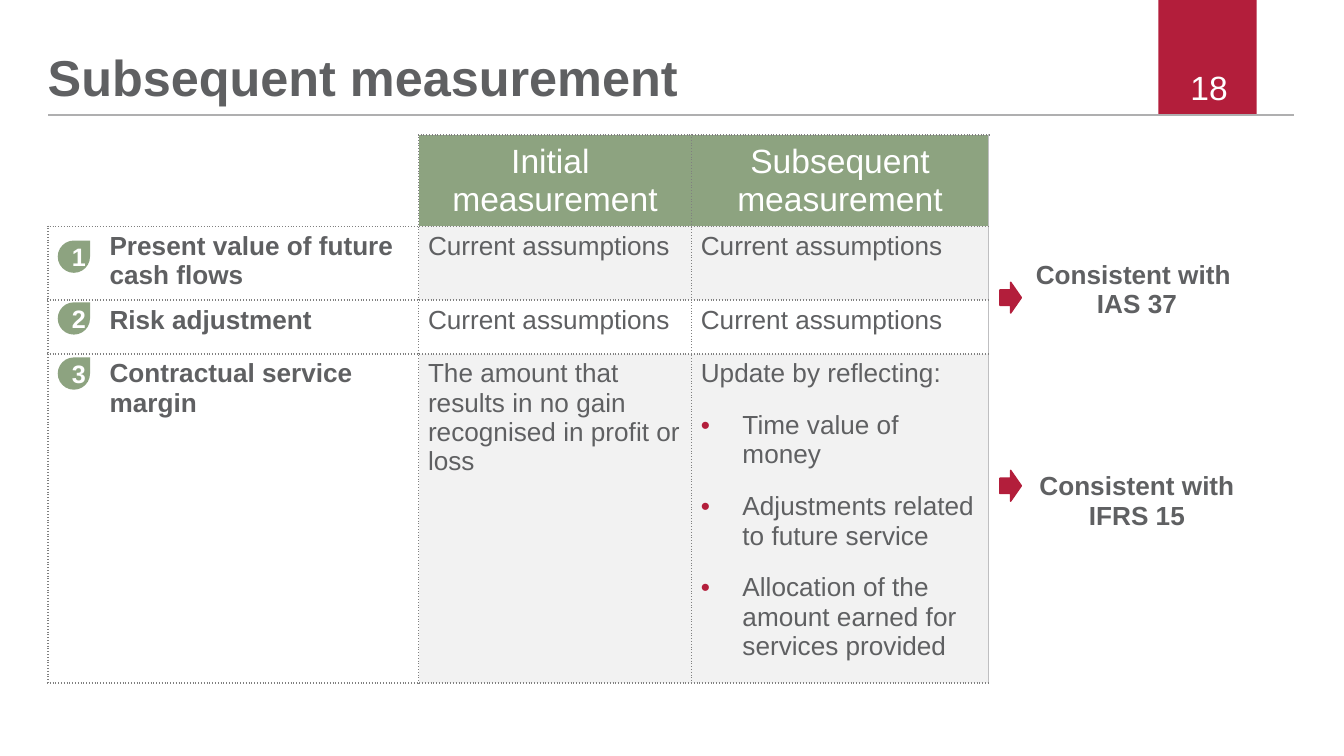
import pptx
import pptx.util
import pptx.dml.color
import pptx.enum.shapes
import pptx.enum.text
import pptx.oxml
import pptx.oxml.ns
from dataclasses import dataclass, field
from typing import Any

SCALE = 4572  # EMU per px, 200 px to the inch
FONT = "Arial"
C = {"red": "B31E3B", "green": "8DA380", "text": "5F6062", "white": "FFFFFF",
     "band": "F2F2F2", "dots": "808080", "edge": "BFBFC1", "rule": "AFAFB0"}
DOTTED, EDGE, WHITE = ("dots", "sysDot"), ("edge", "solid"), ("white", "solid")
ALIGN = pptx.enum.text.PP_ALIGN
ANCHOR = pptx.enum.text.MSO_ANCHOR
SHAPE = pptx.enum.shapes.MSO_SHAPE


@dataclass
class Cell:
    texts: list[str] = field(default_factory=list)
    fill: str | None = None
    middle: bool = False
    fmt: dict[str, Any] = field(default_factory=dict)
    inset_x: int = 14
    bottom: int = 8


def px(n: int) -> int:
    return n * SCALE


def rgb(name: str) -> pptx.dml.color.RGBColor:
    return pptx.dml.color.RGBColor.from_string(C[name])


def element(tag: str, **attrs: Any):
    el = pptx.oxml.parse_xml(f"<a:{tag} {pptx.oxml.ns.nsdecls('a')}/>")
    for key, value in attrs.items():
        el.set(key, str(value))
    return el


def colored(tag: str, color: str):
    el = element(tag)
    el.append(element("srgbClr", val=C[color]))
    return el


def add_text(tf, text: str, first: bool = True, size: float = 14, color: str = "text",
             bold: bool = False, align=ALIGN.LEFT, indent: int = 0, bullet: bool = False,
             before: int = 0, after: int = 0, spacing: float | None = None) -> None:
    p = tf.paragraphs[0] if first else tf.add_paragraph()
    p.alignment, p.line_spacing = align, spacing
    p.space_before = pptx.util.Pt(0 if first else before)
    p.space_after = pptx.util.Pt(after)
    pPr = p._p.get_or_add_pPr()
    if indent:
        pPr.set("marL", str(px(indent)))
    if bullet:
        pPr.set("indent", str(-px(indent)))
        pPr.append(colored("buClr", "red"))
        pPr.append(element("buFont", typeface=FONT))
        pPr.append(element("buChar", char="•"))
    r = p.add_run()
    r.text = text
    r.font.name, r.font.size, r.font.bold = FONT, pptx.util.Pt(size), bold
    r.font.color.rgb = rgb(color)


def set_insets(box, x: int, y: int) -> None:
    box.margin_left = box.margin_right = px(x)
    box.margin_top = box.margin_bottom = px(y)


def add_box(s, at: tuple[int, ...], inset: tuple[int, int], anchor):
    tf = s.shapes.add_textbox(*map(px, at)).text_frame
    tf.word_wrap, tf.vertical_anchor = True, anchor
    set_insets(tf, *inset)
    return tf


def add_shape(s, kind, at: tuple[int, ...], fill: str, line: str | None = None):
    sp = s.shapes.add_shape(kind, *map(px, at))
    sp.shadow.inherit = False
    sp.fill.solid()
    sp.fill.fore_color.rgb = rgb(fill)
    if line:
        sp.line.color.rgb = rgb(line)
        sp.line.width = pptx.util.Pt(0.75)
    else:
        sp.line.fill.background()
    return sp


def set_borders(cell, sides: dict[str, tuple[str, str] | None]) -> None:
    tcPr = cell._tc.get_or_add_tcPr()
    for side in "LRTB":
        ln = element(f"ln{side}", w=12700)
        if sides[side]:
            color, dash = sides[side]
            ln.append(colored("solidFill", color))
            ln.append(element("prstDash", val=dash))
        else:
            ln.append(element("noFill"))
        tcPr.append(ln)


def borders_at(row: int, col: int) -> dict[str, tuple[str, str] | None]:
    if col == 3:
        return {**dict.fromkeys("LRTB"), "L": EDGE}
    sides = dict.fromkeys("LRTB", DOTTED)
    if col == 2:
        sides["R"] = EDGE
    if (row, col) == (0, 0):
        sides["L"] = sides["T"] = WHITE
    return sides


def fill_cell(cell, data: Cell) -> None:
    set_insets(cell, data.inset_x, 8)
    cell.margin_bottom = px(data.bottom)
    cell.vertical_anchor = ANCHOR.MIDDLE if data.middle else ANCHOR.TOP
    if data.fill:
        cell.fill.solid()
        cell.fill.fore_color.rgb = rgb(data.fill)
    else:
        cell.fill.background()
    for i, text in enumerate(data.texts):
        # Lines after the first in a top-anchored cell are bullets
        listed = {"bullet": True, "indent": 62, "before": 6} if i and not data.middle else {}
        add_text(cell.text_frame, text, first=i == 0, **{**data.fmt, **listed})


def header(*texts: str) -> Cell:
    return Cell(list(texts), "green", True,
                {"size": 18, "color": "white", "align": ALIGN.CENTER})


def label(text: str) -> Cell:
    return Cell([text], fmt={"bold": True, "indent": 78})


def remark(*texts: str, **insets: int) -> Cell:
    return Cell(list(texts), None, True, {"bold": True, "align": ALIGN.CENTER}, **insets)


CURRENT = "Current assumptions"
ROWS = [
    [Cell(), header("Initial ", "measurement"), header("Subsequent measurement"), Cell()],
    [label("Present value of future cash flows"), Cell([CURRENT], "band"),
     Cell([CURRENT], "band"), remark("Consistent with ", "IAS 37")],
    [label("Risk adjustment"), Cell([CURRENT], "white"), Cell([CURRENT], "white"), Cell()],
    [label("Contractual service margin"),
     Cell(["The amount that results in no gain recognised in profit or loss"], "band"),
     Cell(["Update by reflecting:", "Time value of money",
           "Adjustments related to future service",
           "Allocation of the amount earned for services provided"], "band", fmt={"after": 6}),
     remark("Consistent with IFRS 15", inset_x=40, bottom=58)],
]
COL_WIDTHS = [552, 406, 442, 442]
ROW_HEIGHTS = [136, 80, 80, 388]


def main() -> None:
    prs = pptx.Presentation()
    prs.slide_width, prs.slide_height = px(2000), px(1125)
    s = prs.slides.add_slide(prs.slide_layouts[6])

    # Page number tab and header rule
    add_shape(s, SHAPE.RECTANGLE, (1724, 0, 146, 171), "red")
    rule = s.shapes.add_connector(pptx.enum.shapes.MSO_CONNECTOR.STRAIGHT,
                                  *map(px, (72, 171, 1926, 171)))
    rule.line.color.rgb = rgb("rule")
    rule.line.width = pptx.util.Pt(1.2)
    rule._element.spPr.append(element("effectLst"))
    add_text(add_box(s, (1379, 100, 466, 60), (18, 8), ANCHOR.MIDDLE), "18",
             size=18, color="white", align=ALIGN.RIGHT)

    # Title
    add_text(add_box(s, (71, 0, 1564, 160), (0, 0), ANCHOR.BOTTOM),
             "Subsequent measurement", size=27, bold=True, spacing=0.9)

    # Measurement table
    frame = s.shapes.add_table(4, 4, *map(px, (71, 201, sum(COL_WIDTHS), sum(ROW_HEIGHTS))))
    table = frame.table
    table.first_row = table.horz_banding = False
    for col, width in zip(table.columns, COL_WIDTHS):
        col.width = px(width)
    for row, height in zip(table.rows, ROW_HEIGHTS):
        row.height = px(height)
    table.cell(1, 3).merge(table.cell(2, 3))
    for i, cells in enumerate(ROWS):
        for j, data in enumerate(cells):
            set_borders(table.cell(i, j), borders_at(i, j))
            fill_cell(table.cell(i, j), data)

    # Numbered markers
    for number, top in enumerate((358, 450, 532), start=1):
        tf = add_shape(s, SHAPE.TEAR, (86, top, 48, 48), "green").text_frame
        tf.vertical_anchor = ANCHOR.MIDDLE
        set_insets(tf, 14, 8)
        add_text(tf, str(number), size=13.5, color="white", bold=True, align=ALIGN.CENTER)

    # Arrows to the remarks
    for top in (420, 700):
        add_shape(s, SHAPE.RIGHT_ARROW, (1488, top, 32, 46), "red", line="red")

    prs.save("out.pptx")


if __name__ == "__main__":
    main()
